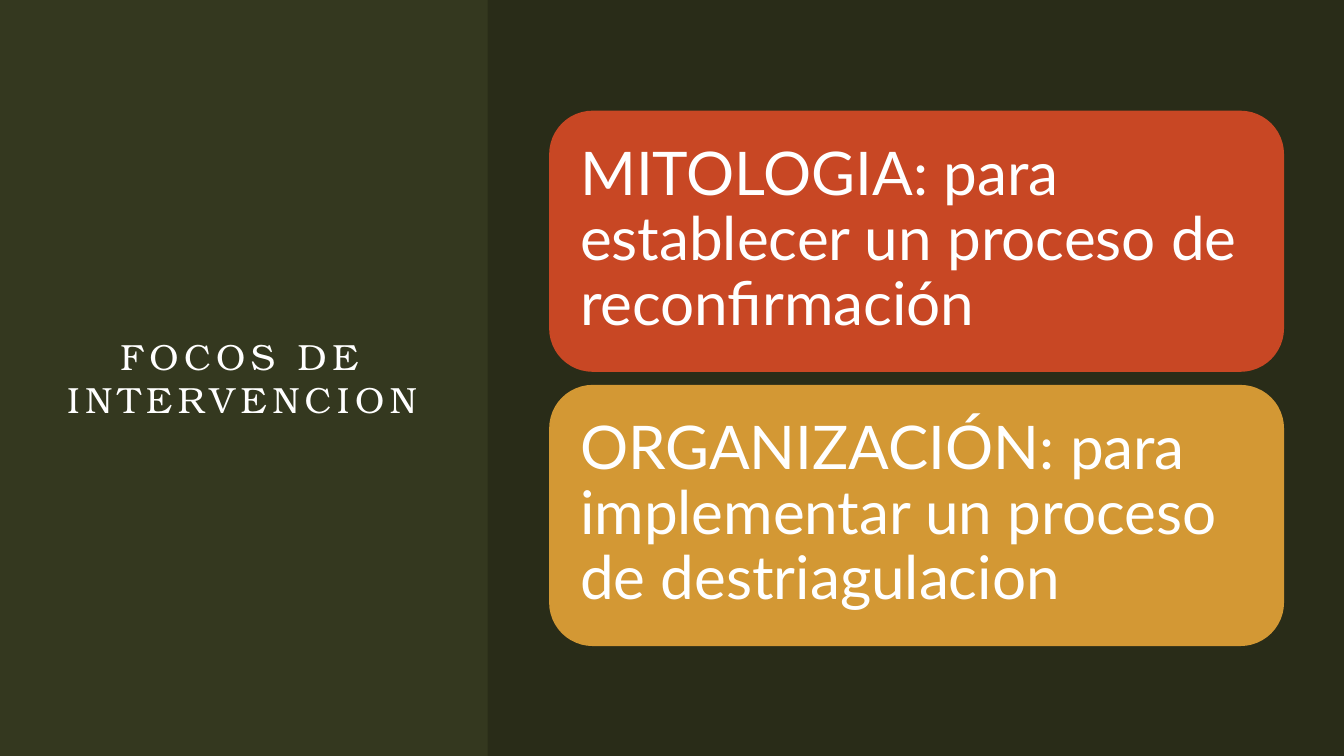
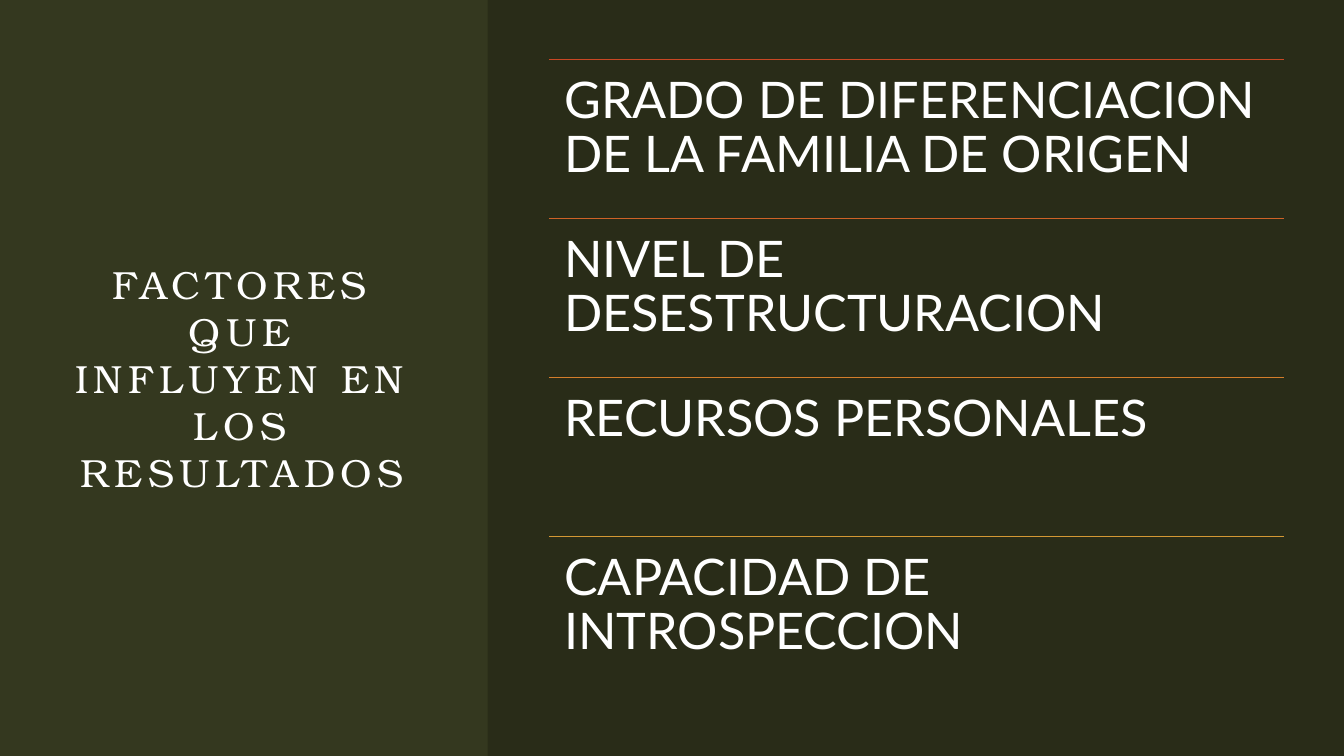
from lxml import etree
from pptx import Presentation
from pptx.dml.color import RGBColor
from pptx.enum.shapes import MSO_CONNECTOR as Connector, MSO_SHAPE as Shape
from pptx.enum.text import MSO_ANCHOR as Anchor, PP_ALIGN as Align
from pptx.oxml.ns import qn
from pptx.util import Cm, Pt

# Content
FOCUS_TITLE = "FOCOS DE INTERVENCION"
FOCUS_CARDS = [
    ("MITOLOGIA: para establecer un proceso de reconfirmación", "red"),
    ("ORGANIZACIÓN: para implementar un proceso de destriagulacion", "gold"),
]
FACTORS_TITLE = "FACTORES QUE INFLUYEN EN LOS RESULTADOS"
FACTORS = [
    ("GRADO DE DIFERENCIACION DE LA FAMILIA DE ORIGEN", "red"),
    ("NIVEL DE DESESTRUCTURACION", "rust"),
    ("RECURSOS PERSONALES", "orange"),
    ("CAPACIDAD DE INTROSPECCION", "gold"),
]

# Shared style
COLORS = {"background": "34381F", "panel": "000000", "text": "FFFFFF",
          "red": "C84724", "rust": "CE6227", "orange": "D37D2B", "gold": "D39834"}
TITLE_FONT, BODY_FONT = "TeX Gyre Bonum", "Lato"
SLIDE_W, SLIDE_H = Cm(33.87), Cm(19.05)
PANEL_LEFT = Cm(12.29)
BODY_LEFT, BODY_W = Cm(13.84), Cm(18.52)
CARD_TOP, CARD_H, CARD_GAP = Cm(2.79), Cm(6.58), Cm(0.33)
ROW_TOP, ROW_H = Cm(1.5), Cm(4.01)


def rgb(name):
    return RGBColor.from_string(COLORS[name])


def write(sp, text, font, size, inset, anchor, align):
    tf = sp.text_frame
    tf.word_wrap = True
    tf.vertical_anchor = anchor
    tf.margin_left = tf.margin_right = tf.margin_top = tf.margin_bottom = inset
    p = tf.paragraphs[0]
    p.text = text
    p.alignment = align
    p.font.name, p.font.size = font, Pt(size)
    p.font.color.rgb = rgb("text")
    return p


def write_body(sp, text, size, inset, anchor):
    p = write(sp, text, BODY_FONT, size, inset, anchor, Align.LEFT)
    p.line_spacing = 0.9


def add_box(s, kind, left, top, width, height, color):
    sp = s.shapes.add_shape(kind, left, top, width, height)
    sp.shadow.inherit = False
    sp.fill.solid()
    sp.fill.fore_color.rgb = rgb(color)
    sp.line.fill.background()
    return sp


def add_rule(s, top, color):
    line = s.shapes.add_connector(Connector.STRAIGHT, BODY_LEFT, top,
                                  BODY_LEFT + BODY_W, top)
    line.line.color.rgb = rgb(color)
    line.line.width = Pt(0.75)
    etree.SubElement(line._element.spPr, qn("a:effectLst"))


def new_slide(prs, title, size):
    s = prs.slides.add_slide(prs.slide_layouts[6])
    s.background.fill.solid()
    s.background.fill.fore_color.rgb = rgb("background")

    # Title on the left
    sp = s.shapes.add_textbox(Cm(1.5), Cm(3), Cm(9.22), Cm(13.03))
    p = write(sp, title, TITLE_FONT, size, 0, Anchor.MIDDLE, Align.CENTER)
    p.runs[0].font._element.set("spc", "400")

    # Translucent panel on the right
    panel = add_box(s, Shape.RECTANGLE, PANEL_LEFT, 0,
                    SLIDE_W - PANEL_LEFT, SLIDE_H, "panel")
    color = panel._element.spPr.find(qn("a:solidFill"))[0]
    etree.SubElement(color, qn("a:alpha"), val="20000")
    return s


def main():
    prs = Presentation()
    prs.slide_width, prs.slide_height = SLIDE_W, SLIDE_H

    # Focus cards
    s = new_slide(prs, FOCUS_TITLE, 26)
    for i, (text, color) in enumerate(FOCUS_CARDS):
        card = add_box(s, Shape.ROUNDED_RECTANGLE, BODY_LEFT,
                       CARD_TOP + i * (CARD_H + CARD_GAP), BODY_W, CARD_H, color)
        write_body(card, text, 43, Cm(0.46), Anchor.MIDDLE)

    # Ruled list of factors
    s = new_slide(prs, FACTORS_TITLE, 28)
    for i, (text, color) in enumerate(FACTORS):
        top = ROW_TOP + i * ROW_H
        add_rule(s, top, color)
        row = s.shapes.add_textbox(BODY_LEFT, top, BODY_W, ROW_H)
        write_body(row, text, 36, Cm(0.38), Anchor.TOP)

    prs.save("out.pptx")


if __name__ == "__main__":
    main()
